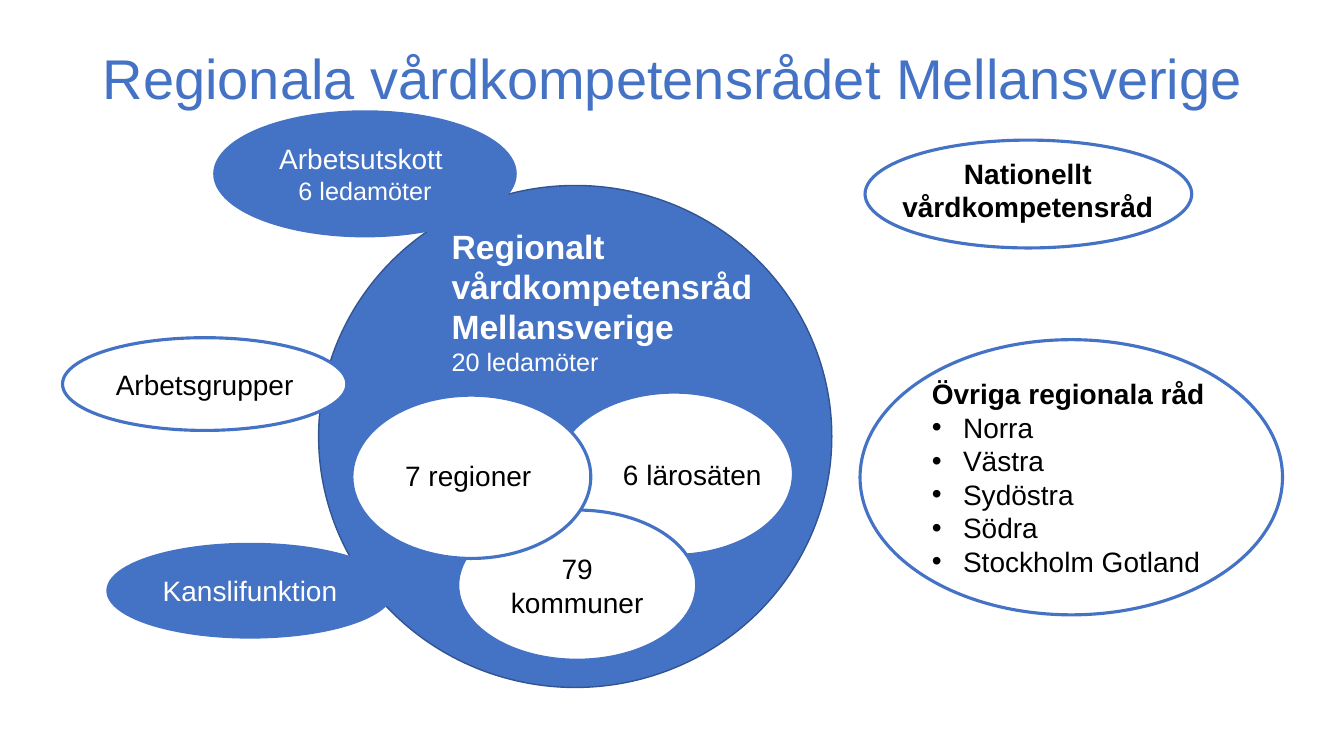
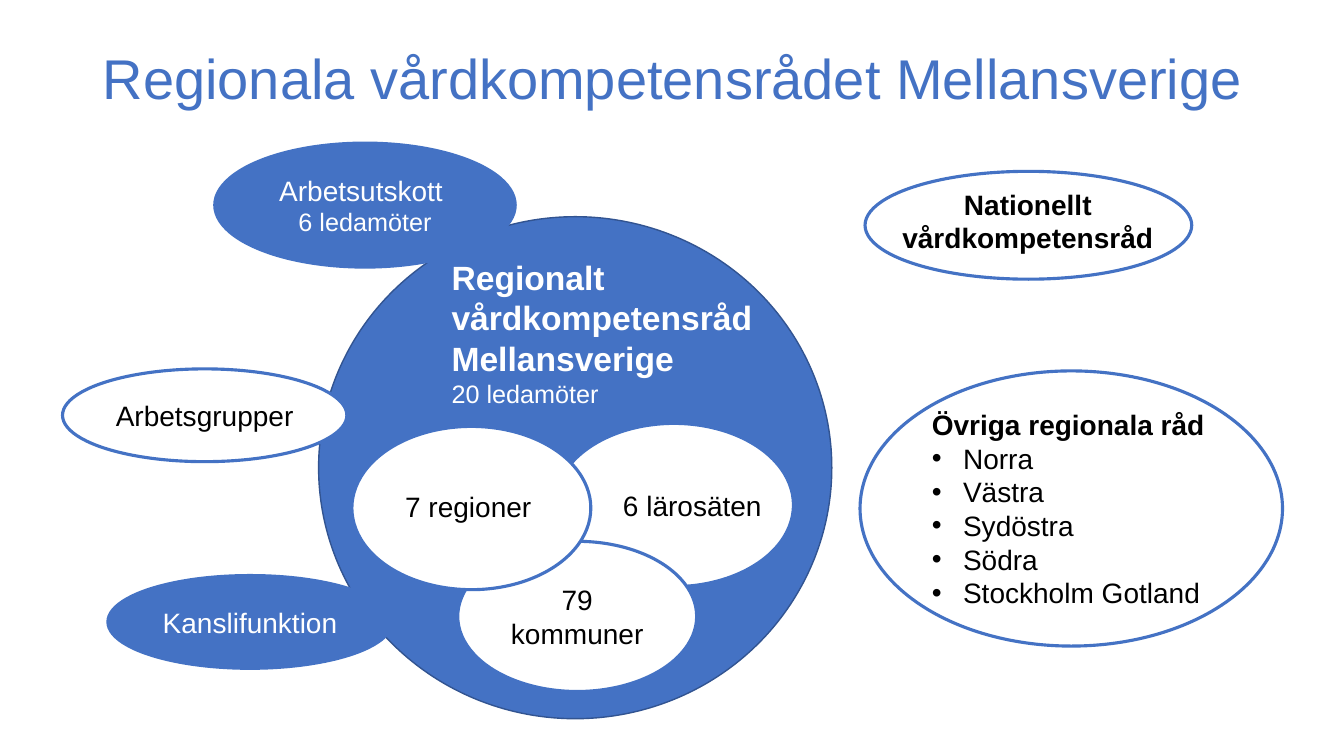
from dataclasses import dataclass

from lxml import etree
from pptx import Presentation
from pptx import util as u
from pptx.dml.color import RGBColor
from pptx.enum import shapes, text
from pptx.oxml.ns import qn

EMU_PER_PX = 9144


@dataclass(frozen=True)
class Theme:
    """Colours, font and type sizes shared by the slides."""
    blue: str = "4472C4"
    dark_blue: str = "325491"
    white: str = "FFFFFF"
    black: str = "000000"
    font: str = "Arial"
    title: int = 40
    heading: int = 24
    body: int = 20
    small: int = 18
    outline: float = 2.25
    thin: float = 1


@dataclass(frozen=True)
class Line:
    """One paragraph of a label."""
    words: str
    size: int = Theme.body
    bold: bool = False
    bullet: bool = False


THEME = Theme()
CENTER, LEFT = text.PP_ALIGN.CENTER, text.PP_ALIGN.LEFT
TITLE = "Regionala vårdkompetensrådet Mellansverige"
COUNCILS = ("Norra", "Västra", "Sydöstra", "Södra", "Stockholm Gotland")
BULLET_INDENT = 31
DROPS = (0, 31)


def px(length):
    """Turn px into EMU."""
    return u.Emu(length * EMU_PER_PX)


def add_bullet(para):
    """Give a paragraph a hanging round bullet."""
    props = para._p.get_or_add_pPr()
    props.set("marL", str(px(BULLET_INDENT)))
    props.set("indent", str(-px(BULLET_INDENT)))
    etree.SubElement(props, qn("a:buFont")).set("typeface", THEME.font)
    etree.SubElement(props, qn("a:buChar")).set("char", "•")


def write(frame, lines, color, align):
    """Fill a text frame with formatted lines."""
    frame.word_wrap = True
    for index, line in enumerate(lines):
        para = frame.add_paragraph() if index else frame.paragraphs[0]
        para.text = line.words
        para.alignment = align
        if line.bullet:
            add_bullet(para)
        for span in para.runs:
            span.font.name = THEME.font
            span.font.size = u.Pt(line.size)
            span.font.bold = line.bold
            span.font.color.rgb = RGBColor.from_string(color)


def add_label(parent, place, lines, color=THEME.black, align=LEFT):
    """Add a text box that grows with its lines."""
    box = parent.shapes.add_textbox(*map(px, place))
    write(box.text_frame, lines, color, align)
    box.text_frame.auto_size = text.MSO_AUTO_SIZE.SHAPE_TO_FIT_TEXT


def add_ellipse(parent, place, lines=(), fill=THEME.white, edge=THEME.blue,
                width=THEME.outline, align=CENTER):
    """Add an ellipse whose text contrasts with its fill."""
    oval = parent.shapes.add_shape(shapes.MSO_SHAPE.OVAL, *map(px, place))
    oval.shadow.inherit = False
    oval.fill.solid()
    oval.fill.fore_color.rgb = RGBColor.from_string(fill)
    oval.line.color.rgb = RGBColor.from_string(edge)
    oval.line.width = u.Pt(width)
    oval.text_frame.vertical_anchor = text.MSO_ANCHOR.MIDDLE
    color = THEME.black if fill == THEME.white else THEME.white
    write(oval.text_frame, lines, color, align)


def add_diagram(page, drop):
    """Add the grouped council diagram, moved down by drop px."""
    group = page.shapes.add_group_shape()
    councils = [Line("Övriga regionala råd", bold=True)]
    councils += [Line(name, bullet=True) for name in COUNCILS]
    add_ellipse(group, (853, 337, 419, 273), councils, align=LEFT)
    add_ellipse(group, (316, 184, 509, 498), fill=THEME.blue,
                edge=THEME.dark_blue, width=THEME.thin)
    add_ellipse(group, (107, 540, 282, 92), [Line("Kanslifunktion")],
                fill=THEME.blue)
    add_ellipse(group, (550, 389, 237, 162))
    add_ellipse(group, (858, 139, 324, 107))
    add_ellipse(group, (454, 506, 237, 149), [Line("79 kommuner")])
    add_ellipse(group, (349, 392, 237, 162))
    add_label(group, (438, 219, 319, 162),
              [Line("Regionalt vårdkompetensråd Mellansverige",
                    THEME.heading, bold=True),
               Line("20 ledamöter", THEME.small)], THEME.white)
    add_label(group, (608, 449, 165, 44), [Line("6 lärosäten")])
    add_label(group, (392, 450, 150, 44), [Line("7 regioner")])
    add_label(group, (881, 150, 277, 77),
              [Line("Nationellt vårdkompetensråd", bold=True)], align=CENTER)
    add_ellipse(group, (62, 335, 282, 92), [Line("Arbetsgrupper")])
    add_ellipse(group, (213, 111, 298, 123),
                [Line("Arbetsutskott "), Line("6 ledamöter", THEME.small)],
                fill=THEME.blue)
    group.top += px(drop)


def main():
    """Build and save the deck."""
    deck = Presentation()
    deck.slide_width, deck.slide_height = px(1333), px(750)
    for drop in DROPS:
        page = deck.slides.add_slide(deck.slide_layouts[6])
        add_label(page, (70, 38, 1193, 77), [Line(TITLE, THEME.title)],
                  THEME.blue, CENTER)
        add_diagram(page, drop)
    deck.save("out.pptx")


if __name__ == "__main__":
    main()
